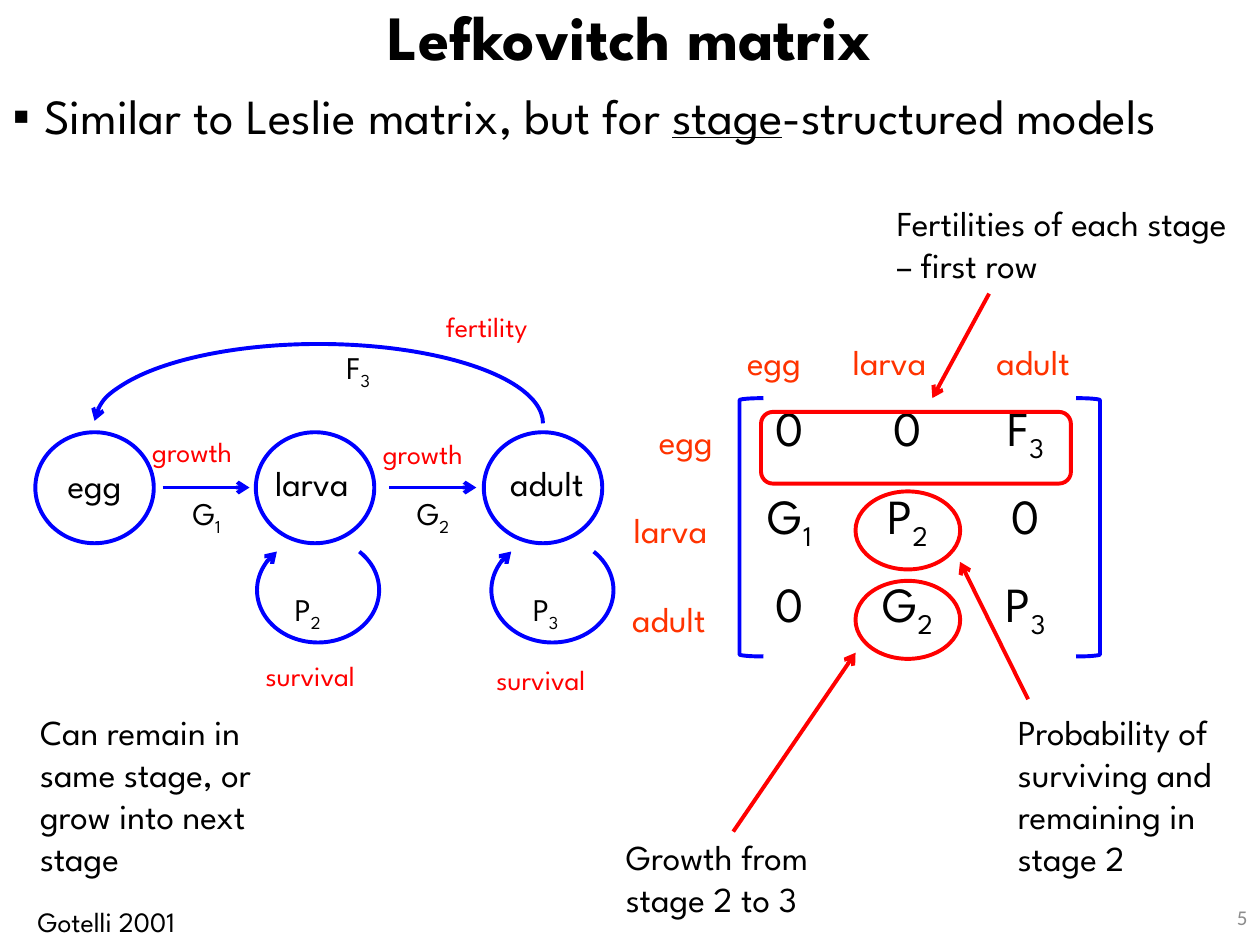
from dataclasses import dataclass
from typing import Any, NamedTuple

from lxml.etree import SubElement
from pptx import Presentation
from pptx.dml.color import RGBColor
from pptx.enum.shapes import MSO_CONNECTOR, MSO_SHAPE
from pptx.enum.text import MSO_ANCHOR, MSO_AUTO_SIZE, PP_ALIGN
from pptx.oxml.ns import qn
from pptx.util import Pt


@dataclass(frozen=True)
class Theme:
    font: str = "League Spartan"
    plain: str = "Calibri"
    black: str = "000000"
    blue: str = "0000FF"
    red: str = "FF0000"
    rust: str = "FF3300"
    gray: str = "8C8C8C"
    title: float = 36
    body: float = 28
    text: float = 20
    term: float = 18
    note: float = 16
    page: float = 12
    line: float = 2.25


class Box(NamedTuple):
    x: float
    y: float
    w: float
    h: float


class Label(NamedTuple):
    text: str
    box: Box
    size: float
    color: str
    wrap: bool = False
    align: Any = None


class Arrow(NamedTuple):
    start: tuple[float, float]
    end: tuple[float, float]
    color: str


THEME = Theme()


def write(frame: Any, text: str, *, size: float, color: str = THEME.black,
          font: str = THEME.font, bold: bool = False, align: Any = None) -> Any:
    """Parts are split by |; a leading ~ lowers a part and _ underlines it."""
    para = frame.paragraphs[0]
    para.alignment = align
    for part in text.split("|"):
        run = para.add_run()
        run.text = part.lstrip("~_")
        run.font.size = Pt(size)
        run.font.name = font
        run.font.bold = bold
        run.font.color.rgb = RGBColor.from_string(color)
        if part.startswith("_"):
            run.font.underline = True
        if part.startswith("~"):
            run._r.get_or_add_rPr().set("baseline", "-25000")
    return para


def place(shape: Any, box: Box) -> None:
    shape.left, shape.top, shape.width, shape.height = map(Pt, box)


def label(shapes: Any, item: Label) -> None:
    frame = shapes.add_textbox(*map(Pt, item.box)).text_frame
    frame.word_wrap = item.wrap
    frame.auto_size = MSO_AUTO_SIZE.SHAPE_TO_FIT_TEXT
    write(frame, item.text, size=item.size, color=item.color, align=item.align)


def stroke(line: Any, color: str) -> None:
    line.color.rgb = RGBColor.from_string(color)
    line.width = Pt(THEME.line)


def tip(shape: Any, side: str) -> None:
    SubElement(shape.line._get_or_add_ln(), qn(f"a:{side}End"), type="arrow")


def outline(shapes: Any, kind: Any, box: Box, color: str, flip: str = "") -> Any:
    shape = shapes.add_shape(kind, *map(Pt, box))
    shape.shadow.inherit = False
    shape.fill.background()
    stroke(shape.line, color)
    if flip:
        shape._element.spPr.xfrm.set(flip, "1")
    return shape


def arc(shapes: Any, box: Box, ends: tuple[float, float], flip: str = "") -> None:
    shape = outline(shapes, MSO_SHAPE.ARC, box, THEME.blue, flip)
    for spot, angle in enumerate(ends):
        shape.adjustments[spot] = angle * 0.6
    tip(shape, "head")


def arrow(shapes: Any, item: Arrow) -> None:
    link = shapes.add_connector(MSO_CONNECTOR.STRAIGHT, *map(Pt, item.start + item.end))
    stroke(link.line, item.color)
    tip(link, "tail")
    SubElement(link._element.spPr, qn("a:effectLst"))


def draw_head(slide: Any) -> None:
    title, body = slide.placeholders
    place(title, Box(0, 0.7, 720, 44.6))
    para = write(title.text_frame, "Lefkovitch matrix", size=THEME.title,
                 bold=True, align=PP_ALIGN.CENTER)
    para.line_spacing = 0.9
    place(body, Box(0, 49, 720, 408.2))
    para = write(body.text_frame,
                 "Similar to Leslie matrix, but for |_stage|-structured models",
                 size=THEME.body)
    para.line_spacing = 0.9
    para.space_before = Pt(10)
    props = para._p.get_or_add_pPr()
    props.set("marL", str(Pt(18)))
    props.set("indent", str(Pt(-18)))
    SubElement(props, qn("a:buFont"), typeface="Arial")
    SubElement(props, qn("a:buChar"), char="▪")


def draw_cycle(shapes: Any) -> None:
    group = shapes.add_group_shape().shapes
    stages = (("egg", 20.2, Box(16.6, 261.4, 74.9, 31.7)),
              ("larva", 146.2, Box(133.9, 259.9, 88.6, 31.7)),
              ("adult", 276.5, Box(265, 259.9, 95, 31.7)))
    for name, x, box in stages:
        outline(group, MSO_SHAPE.OVAL, Box(x, 247, 67.7, 63.4), THEME.blue)
        label(group, Label(name, box, THEME.text, THEME.black, True, PP_ALIGN.CENTER))
    for x in (92.9, 222.5):
        arrow(group, Arrow((x, 278.6), (x + 49.7, 278.6), THEME.blue))
    arc(group, Box(54, 196.6, 256.3, 90.7), (180.64, 0))
    for text, box in (("G|~1", Box(103, 278.6, 36, 28.8)),
                      ("G|~2", Box(231.1, 278.6, 36, 28.8)),
                      ("F|~3", Box(190.8, 195.1, 49, 43.9))):
        label(group, Label(text, box, THEME.term, THEME.black))
    for text, x, left in (("P|~2", 146.9, 161.3), ("P|~3", 280.8, 297.4)):
        arc(shapes, Box(x, 307.4, 69.8, 59.8), (136.81, 43.06), "flipV")
        label(shapes, Label(text, Box(left, 333.4, 33.8, 28.8), THEME.term, THEME.black))
    for text, x, y, w in (("growth", 79.9, 244.8, 69.1), ("growth", 211.7, 246.2, 69.1),
                          ("survival", 144.7, 373, 75.6), ("survival", 276.5, 375.1, 75.6),
                          ("fertility", 247.7, 173.5, 69.8)):
        label(shapes, Label(text, Box(x, y, w, 26.6), THEME.note, THEME.red))


def draw_matrix(shapes: Any) -> None:
    rows = (("0", "0", "F|~3"), ("G|~1", "P|~2", "0"), ("0", "G|~2", "P|~3"))
    grid = shapes.add_table(3, 3, *map(Pt, (417.6, 231.8, 202.2, 151.2))).table
    grid.first_row = grid.horz_banding = False
    for i, row in enumerate(rows):
        grid.rows[i].height = Pt(50.4)
        grid.columns[i].width = Pt(67.4)
        for j, text in enumerate(row):
            cell = grid.cell(i, j)
            cell.fill.background()
            write(cell.text_frame, text, size=THEME.body, align=PP_ALIGN.CENTER)
    group = shapes.add_group_shape().shapes
    for x, flip in ((422.6, ""), (614.9, "flipH")):
        outline(group, MSO_SHAPE.LEFT_BRACKET, Box(x, 227.5, 13.7, 147.6), THEME.blue, flip)
    for text, x, y, w in (("egg", 419.8, 190.8, 51), ("larva", 480.2, 190.8, 63.4),
                          ("adult", 562.3, 190.8, 64), ("egg", 369.4, 236.2, 51),
                          ("larva", 355, 287.3, 63.4), ("adult", 354.2, 337.7, 64)):
        label(shapes, Label(text, Box(x, y, w, 31.7), THEME.text, THEME.rust))
    outline(shapes, MSO_SHAPE.ROUNDED_RECTANGLE, Box(434.9, 235.4, 177.1, 41), THEME.red)
    for y in (280.8, 331.9):
        outline(shapes, MSO_SHAPE.OVAL, Box(488.9, y, 59.8, 44.6), THEME.red)


def draw_notes(shapes: Any) -> None:
    for text, box in (
        ("Can remain in same stage, or grow into next stage", Box(15.8, 402.5, 162, 104.4)),
        ("Growth from stage 2 to 3", Box(350.6, 473.8, 145.4, 55.4)),
        ("Probability of surviving and remaining in stage 2", Box(574.6, 402.5, 145.4, 104.4)),
        ("Fertilities of each stage – first row", Box(505.4, 111.6, 205.2, 55.4)),
    ):
        label(shapes, Label(text, box, THEME.text, THEME.black, True))
    for start, end in (((419, 475.2), (488.9, 373)), ((587.5, 399.6), (548.6, 321.1)),
                       ((565.2, 167.8), (532.8, 227.5))):
        arrow(shapes, Arrow(start, end, THEME.red))
    label(shapes, Label("Gotelli 2001", Box(14.4, 513.4, 108, 26.6), THEME.note, THEME.black))
    frame = shapes.add_textbox(*map(Pt, (558, 509.8, 162, 28.8))).text_frame
    frame.word_wrap = True
    frame.vertical_anchor = MSO_ANCHOR.MIDDLE
    write(frame, "5", size=THEME.page, color=THEME.gray, font=THEME.plain,
          align=PP_ALIGN.RIGHT)


def main() -> None:
    deck = Presentation()
    deck.slide_width, deck.slide_height = Pt(720), Pt(540)
    slide = deck.slides.add_slide(deck.slide_layouts[1])
    draw_head(slide)
    draw_cycle(slide.shapes)
    draw_matrix(slide.shapes)
    draw_notes(slide.shapes)
    deck.save("out.pptx")


if __name__ == "__main__":
    main()
